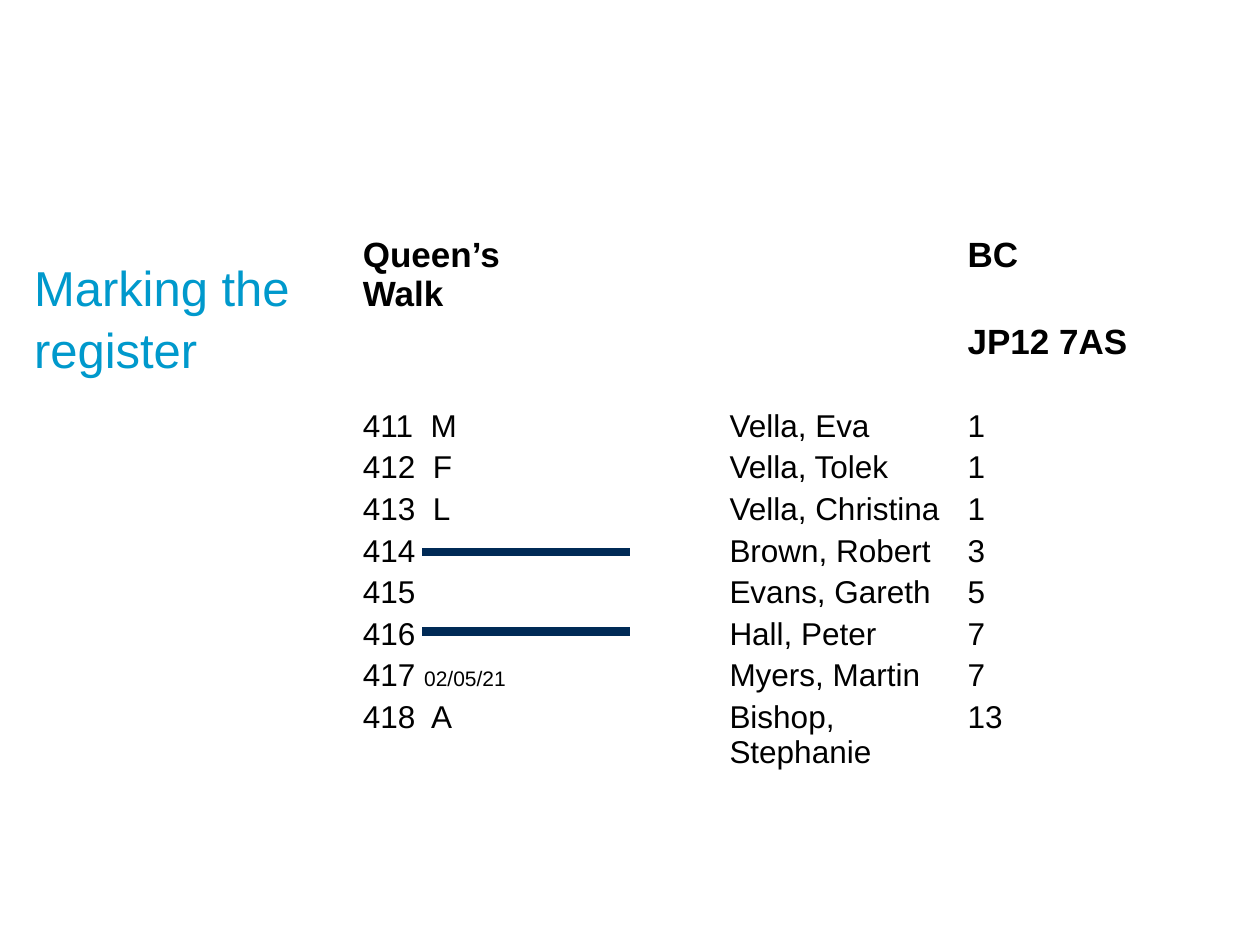
from lxml import etree
from pptx import Presentation
from pptx.dml.color import RGBColor
from pptx.enum.shapes import MSO_CONNECTOR
from pptx.enum.text import MSO_ANCHOR, PP_ALIGN
from pptx.oxml.ns import qn
from pptx.util import Inches, Pt

TOP = MSO_ANCHOR.TOP
LEFT = PP_ALIGN.LEFT
STRAIGHT = MSO_CONNECTOR.STRAIGHT

FONT = "Arial"
BLACK, WHITE, BLUE, NAVY = "000000", "FFFFFF", "0099CC", "002A56"

COLUMN_WIDTHS = [1.18, 1.73, 1.89, 1.52]
ROW_HEIGHTS = [0.69, 0.36, 0.31] + [0.33] * 7 + [0.63, 0.33, 0.31]
HEADER_ROWS = 2
CELL_MARGIN = 0.01

# Each cell is a text or a list of (text, size) spans.
REGISTER = [
    ["Queen’s Walk", "", "", "BC"],
    ["", "", "", "JP12 7AS"],
    ["", "", "", ""],
    ["411  M", "", "Vella, Eva", "1"],
    ["412  F", "", "Vella, Tolek", "1"],
    ["413  L", "", "Vella, Christina", "1"],
    ["414", "", "Brown, Robert", "3"],
    ["415", "", "Evans, Gareth", "5"],
    ["416", "", "Hall, Peter", "7"],
    [[("417 ", 18), ("02/05/21", 12)], "", "Myers, Martin", "7"],
    ["418  A", "", "Bishop, Stephanie", "13"],
    ["", "", "", ""],
    ["", "", "", ""],
]


def color(hex_value):
    return RGBColor.from_string(hex_value)


def style_font(font, size, hex_value, bold=False):
    font.name = FONT
    font.size = Pt(size)
    font.bold = bold
    font.color.rgb = color(hex_value)


def set_margins(target, margin):
    target.margin_left = target.margin_right = Inches(margin)
    target.margin_top = target.margin_bottom = Inches(margin)


def place_title(page, left, top, width, height):
    title = page.shapes.title
    title.left, title.top = Inches(left), Inches(top)
    title.width, title.height = Inches(width), Inches(height)
    frame = title.text_frame
    frame.text = "Marking the register"
    frame.word_wrap = True
    frame.vertical_anchor = TOP
    set_margins(frame, 0)
    para = frame.paragraphs[0]
    para.alignment = LEFT
    para.line_spacing = 1.05
    style_font(para.runs[0].font, 28, BLUE)


def fill_cell(cell, content, size, bold):
    cell.fill.solid()
    cell.fill.fore_color.rgb = color(WHITE)
    cell.vertical_anchor = TOP
    set_margins(cell, CELL_MARGIN)
    spans = [(content, size)] if isinstance(content, str) else content
    para = cell.text_frame.paragraphs[0]
    for text, span_size in spans:
        if text:
            span = para.add_run()
            span.text = text
            style_font(span.font, span_size, BLACK, bold)


def place_register(page, left, top, width, height):
    table = page.shapes.add_table(
        len(ROW_HEIGHTS), len(COLUMN_WIDTHS),
        Inches(left), Inches(top), Inches(width), Inches(height)).table
    table.first_row = table.horz_banding = False
    for column, column_width in zip(table.columns, COLUMN_WIDTHS):
        column.width = Inches(column_width)
    for row_index, row in enumerate(table.rows):
        row.height = Inches(ROW_HEIGHTS[row_index])
        is_header = row_index < HEADER_ROWS
        for cell, content in zip(row.cells, REGISTER[row_index]):
            fill_cell(cell, content, 20 if is_header else 18, is_header)


def strike_out(page, left, y, width):
    line = page.shapes.add_connector(
        STRAIGHT, Inches(left), Inches(y), Inches(left + width), Inches(y))
    line.line.color.rgb = color(NAVY)
    line.line.width = Pt(5)
    etree.SubElement(line._element.spPr, qn("a:effectLst"))


def main():
    deck = Presentation()
    deck.slide_width, deck.slide_height = Inches(10), Inches(7.5)
    page = deck.slides.add_slide(deck.slide_layouts[5])
    place_title(page, 0.27, 2.02, 2.75, 4.67)
    place_register(page, 2.87, 1.86, sum(COLUMN_WIDTHS), sum(ROW_HEIGHTS))
    for y in (4.38, 5.01):
        strike_out(page, 3.35, y, 1.65)
    deck.save("out.pptx")


if __name__ == "__main__":
    main()
